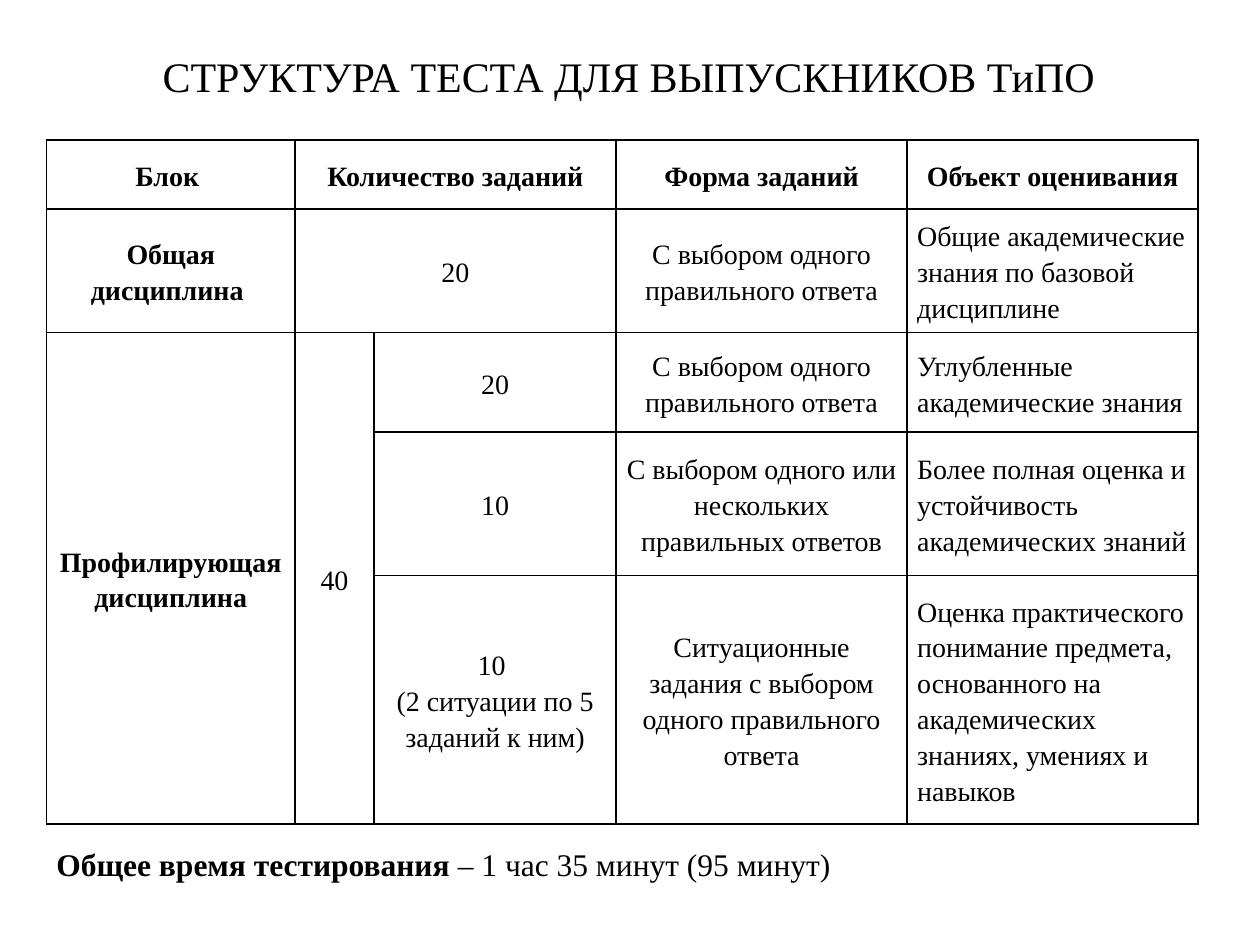
from lxml import etree
from pptx import Presentation
from pptx.dml.color import RGBColor
from pptx.enum.text import MSO_ANCHOR, PP_ALIGN
from pptx.oxml.ns import qn
from pptx.util import Inches, Pt

MID = MSO_ANCHOR.MIDDLE
LEFT, CENTER = PP_ALIGN.LEFT, PP_ALIGN.CENTER

THEME = {
    "font": "Times New Roman", "ink": "000000", "paper": "FFFFFF",
    "title": 24, "cell": 16, "note": 18, "rule": 1, "lead": 1.15,
}

TITLE = "СТРУКТУРА ТЕСТА ДЛЯ ВЫПУСКНИКОВ ТиПО"
NOTE = [("Общее время тестирования", True), (" – 1 час 35 минут (95 минут)", False)]
ONE = "С выбором одного правильного ответа"
# None marks a cell covered by a merged neighbour
ROWS = [
    ["Блок ", "Количество заданий", None, "Форма заданий", "Объект оценивания"],
    ["Общая дисциплина ", "20", None, ONE,
     "Общие академические знания по базовой дисциплине"],
    ["Профилирующая дисциплина", "40", "20", ONE,
     "Углубленные академические знания"],
    [None, None, "10", "С выбором одного или нескольких правильных ответов",
     "Более полная оценка и устойчивость академических знаний"],
    [None, None, "10 \v(2 ситуации по 5 заданий к ним)",
     "Ситуационные задания с выбором одного правильного ответа",
     "Оценка практического понимание предмета, основанного на "
     "академических знаниях, умениях и навыков"],
]
MERGES = [((0, 1), (0, 2)), ((1, 1), (1, 2)), ((2, 0), (4, 0)), ((2, 1), (4, 1))]
WIDTHS = [1.97, 0.63, 1.92, 2.31, 2.31]
HEIGHTS = [0.55, 0.98, 0.79, 1.14, 1.97]


def style(font, size, bold=False):
    font.name, font.size, font.bold = THEME["font"], Pt(size), bold
    font.color.rgb = RGBColor.from_string(THEME["ink"])


def add_box(slide, area, runs, size, align):
    box = slide.shapes.add_textbox(*map(Inches, area))
    frame = box.text_frame
    frame.word_wrap = True
    frame.vertical_anchor = MID
    para = frame.paragraphs[0]
    para.alignment = align
    for text, bold in runs:
        run = para.add_run()
        run.text = text
        style(run.font, size, bold)


def rule(cell):
    """Draw all four borders; they must come before the cell's fill."""
    props = cell._tc.get_or_add_tcPr()
    for spot, tag in enumerate(("a:lnL", "a:lnR", "a:lnT", "a:lnB")):
        line = etree.Element(qn(tag), w=str(Pt(THEME["rule"])))
        fill = etree.SubElement(line, qn("a:solidFill"))
        etree.SubElement(fill, qn("a:srgbClr"), val=THEME["ink"])
        props.insert(spot, line)


def add_grid(slide, left, top):
    area = map(Inches, (left, top, sum(WIDTHS), sum(HEIGHTS)))
    table = slide.shapes.add_table(len(ROWS), len(WIDTHS), *area).table
    table.first_row = table.horz_banding = False
    for col, width in zip(table.columns, WIDTHS):
        col.width = Inches(width)
    for row, height in zip(table.rows, HEIGHTS):
        row.height = Inches(height)
    for first, last in MERGES:
        table.cell(*first).merge(table.cell(*last))
    for r, row in enumerate(ROWS):
        for c, text in enumerate(row):
            cell = table.cell(r, c)
            cell.fill.solid()
            cell.fill.fore_color.rgb = RGBColor.from_string(THEME["paper"])
            rule(cell)
            if text is None:
                continue
            cell.margin_left = cell.margin_right = Inches(0.08)
            cell.margin_top = cell.margin_bottom = 0
            cell.vertical_anchor = MID
            cell.text = text
            para = cell.text_frame.paragraphs[0]
            para.alignment = LEFT if r and c == len(row) - 1 else CENTER
            para.line_spacing = THEME["lead"]
            style(para.font, THEME["cell"], r == 0 or c == 0)


def main():
    deck = Presentation()
    deck.slide_width, deck.slide_height = Inches(10), Inches(7.5)
    slide = deck.slides.add_slide(deck.slide_layouts[6])
    add_box(slide, (0.49, 0.35, 9, 0.5), [(TITLE, False)], THEME["title"], CENTER)
    add_grid(slide, 0.37, 1.11)
    add_box(slide, (0.35, 6.66, 9.13, 0.4), NOTE, THEME["note"], LEFT)
    deck.save("out.pptx")


if __name__ == "__main__":
    main()
